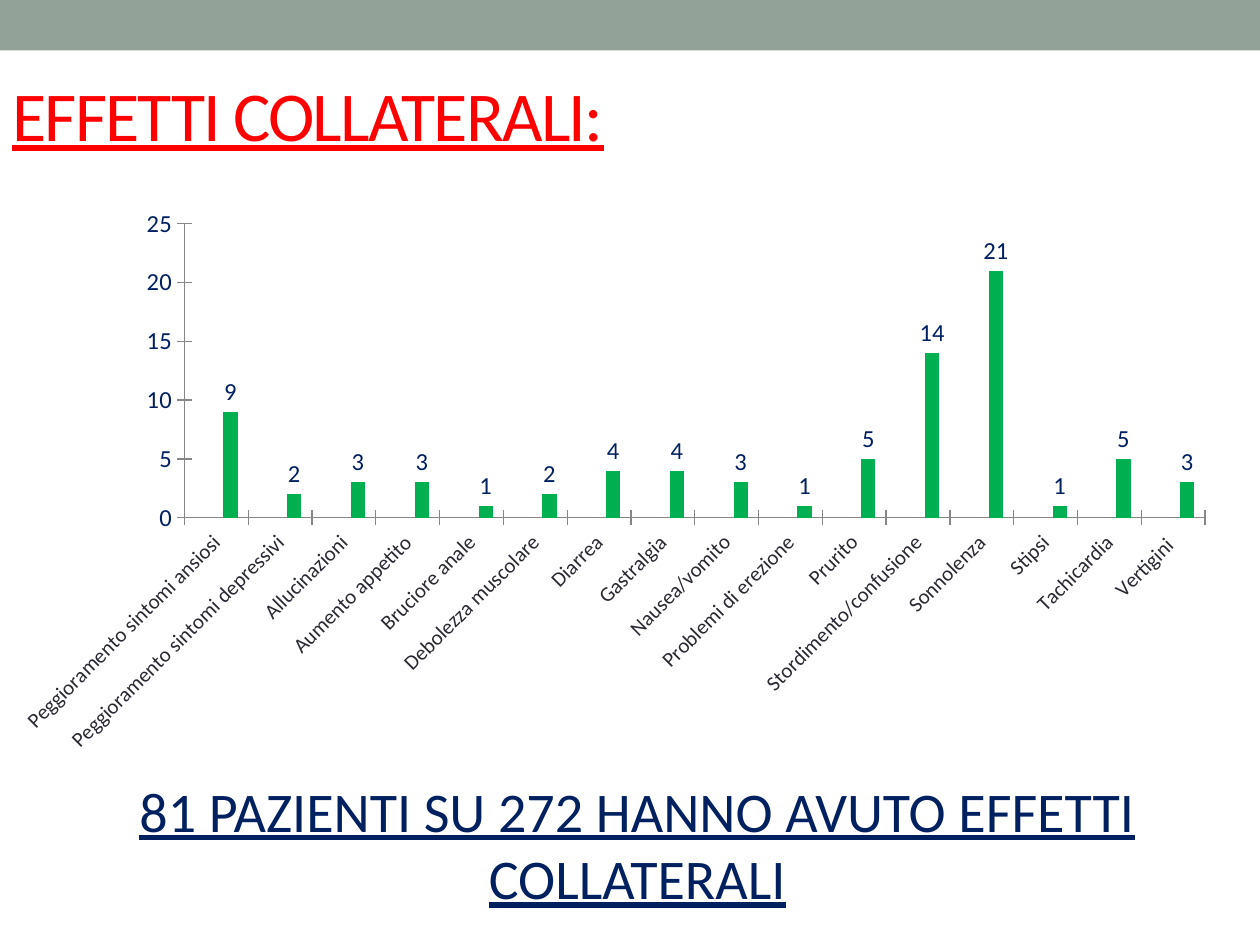
from lxml import etree
from pptx import Presentation
from pptx.chart.data import CategoryChartData
from pptx.dml.color import RGBColor
from pptx.enum.chart import XL_CHART_TYPE as ChartType, XL_LABEL_POSITION as LabelPos
from pptx.enum.chart import XL_TICK_MARK as Tick
from pptx.enum.shapes import MSO_SHAPE as Shape
from pptx.enum.text import MSO_ANCHOR as Anchor, PP_ALIGN as Align
from pptx.oxml.ns import qn
from pptx.util import Cm, Pt

SAGE = RGBColor(0x93, 0xA2, 0x99)
TAN = RGBColor(0xAD, 0x8F, 0x67)
GREEN = RGBColor(0x00, 0xB0, 0x50)
RED = RGBColor(0xFF, 0x00, 0x00)
NAVY = RGBColor(0x00, 0x20, 0x60)
DARK = RGBColor(0x29, 0x29, 0x34)
GREY = RGBColor(0x86, 0x86, 0x86)

# Content
TITLE = "EFFETTI COLLATERALI:"
SUMMARY = "81 PAZIENTI SU 272 HANNO AVUTO EFFETTI COLLATERALI"
EFFECTS = [
    ("Peggioramento sintomi ansiosi", 9),
    ("Peggioramento sintomi depressivi", 2),
    ("Allucinazioni", 3),
    ("Aumento appetito", 3),
    ("Bruciore anale", 1),
    ("Debolezza muscolare", 2),
    ("Diarrea", 4),
    ("Gastralgia", 4),
    ("Nausea/vomito", 3),
    ("Problemi di erezione", 1),
    ("Prurito", 5),
    ("Stordimento/confusione", 14),
    ("Sonnolenza", 21),
    ("Stipsi", 1),
    ("Tachicardia", 5),
    ("Vertigini ", 3),
]
SERIES_COLORS = [SAGE, TAN, GREEN]  # only the last series holds values
PLOT_AREA = {"x": 0.15, "y": 0.05, "w": 0.83, "h": 0.52}  # shares of the chart


def set_font(font, size, color, name="Calibri"):
    font.size, font.name = Pt(size), name
    font.color.rgb = color


def add_text(slide, text, box, size, color, align=Align.LEFT,
             anchor=Anchor.TOP, spacing=None):
    tf = slide.shapes.add_textbox(*map(Cm, box)).text_frame
    tf.word_wrap, tf.vertical_anchor = True, anchor
    p = tf.paragraphs[0]
    p.alignment = align
    r = p.add_run()
    r.text = text
    set_font(r.font, size, color)
    r.font.underline = True
    if spacing is not None:
        r.font._element.set("spc", str(spacing * 100))


def format_axis(axis, size, color):
    axis.has_major_gridlines = False
    axis.major_tick_mark = Tick.CROSS
    axis.format.line.color.rgb = GREY
    set_font(axis.tick_labels.font, size, color)


def set_plot_area(chart):
    plot_area = chart._chartSpace.chart.plotArea
    for old in plot_area.findall(qn("c:layout")):
        plot_area.remove(old)
    layout = etree.Element(qn("c:layout"))
    manual = etree.SubElement(layout, qn("c:manualLayout"))
    settings = {"layoutTarget": "inner", "xMode": "edge", "yMode": "edge", **PLOT_AREA}
    for tag, value in settings.items():
        etree.SubElement(manual, qn(f"c:{tag}")).set("val", str(value))
    plot_area.insert(0, layout)


def add_effects_chart(slide, box):
    names, counts = zip(*EFFECTS)
    data = CategoryChartData()
    data.categories = names
    empty = [None] * len(names)
    for i, values in enumerate([empty, empty, counts], 1):
        data.add_series(f"Series {i}", values)
    chart = slide.shapes.add_chart(ChartType.COLUMN_CLUSTERED, *map(Cm, box), data).chart
    chart.has_legend = chart.has_title = False
    set_font(chart.font, 10, DARK, "Arial")
    set_plot_area(chart)

    # Axes, with slanted category names
    format_axis(chart.category_axis, 12, DARK)
    format_axis(chart.value_axis, 14, NAVY)
    chart.category_axis._element.txPr.bodyPr.set("rot", str(-45 * 60000))
    chart.value_axis.minimum_scale, chart.value_axis.maximum_scale = 0, 25
    chart.value_axis.major_unit = 5

    # Columns and their values
    plot = chart.plots[0]
    plot.gap_width, plot.overlap, plot.vary_by_categories = 150, 0, False
    for series, color in zip(plot.series, SERIES_COLORS):
        series.format.fill.solid()
        series.format.fill.fore_color.rgb = color
    labels = plot.series[-1].data_labels
    labels.show_value = True
    labels.position = LabelPos.OUTSIDE_END
    set_font(labels.font, 14, NAVY)


def main():
    prs = Presentation()
    prs.slide_width, prs.slide_height = Cm(25.4), Cm(19.05)
    slide = prs.slides.add_slide(prs.slide_layouts[6])

    # Top band
    band = slide.shapes.add_shape(Shape.RECTANGLE, 0, 0, prs.slide_width, Cm(1.02))
    band.shadow.inherit = False
    band.fill.solid()
    band.fill.fore_color.rgb = SAGE
    band.line.fill.background()

    add_text(slide, TITLE, (0, 0.91, 12.47, 2.74), 40, RED,
             anchor=Anchor.MIDDLE, spacing=-1)
    add_effects_chart(slide, (0, 3.94, 24.79, 11.4))
    add_text(slide, SUMMARY, (0.3, 15.52, 25.1, 3), 32, NAVY, align=Align.CENTER)
    prs.save("out.pptx")


if __name__ == "__main__":
    main()
